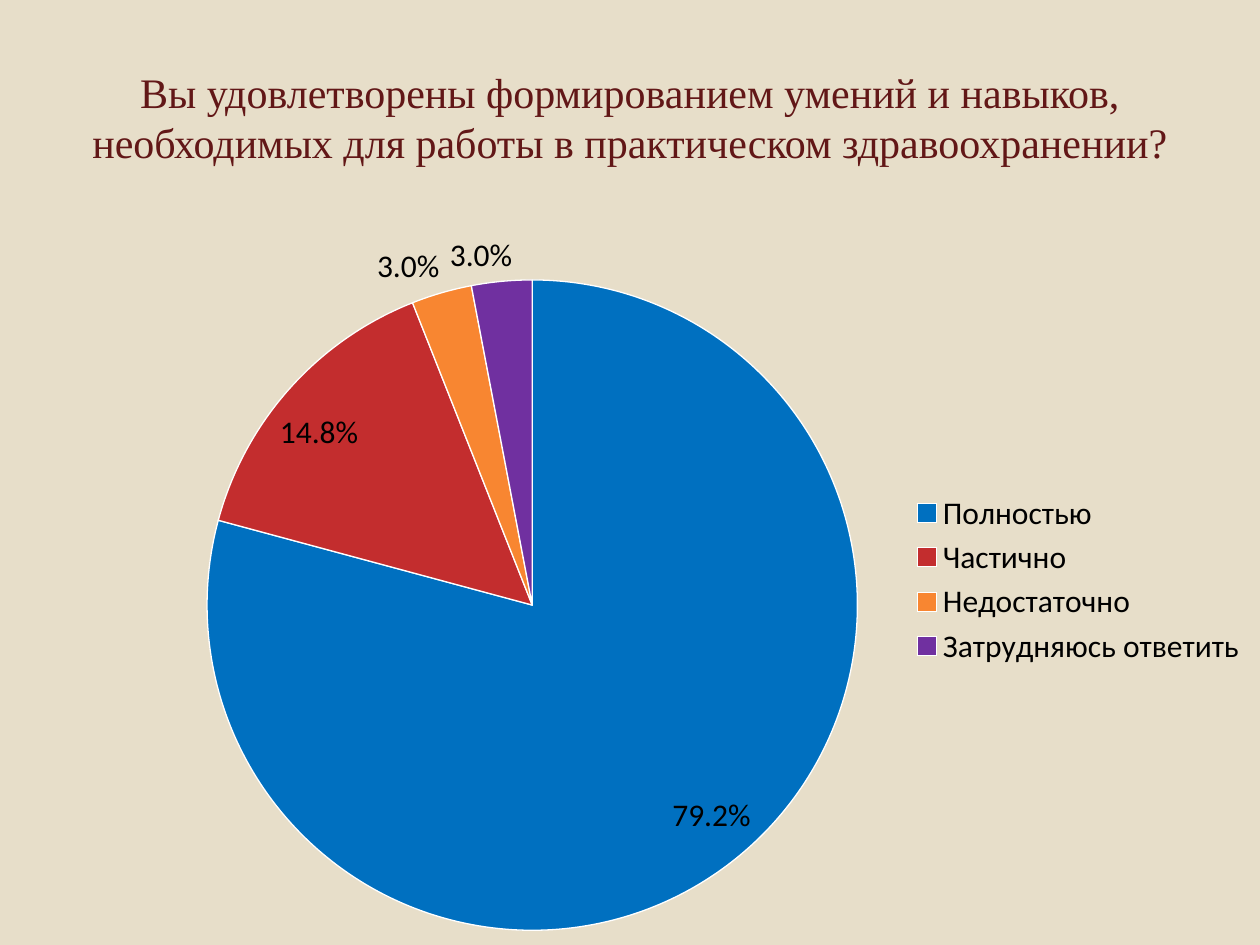
from dataclasses import dataclass

from lxml.etree import SubElement
from pptx import Presentation
from pptx.chart.data import CategoryChartData
from pptx.dml.color import RGBColor
from pptx.enum.chart import XL_CHART_TYPE, XL_LABEL_POSITION, XL_LEGEND_POSITION
from pptx.enum.text import MSO_ANCHOR, PP_ALIGN
from pptx.oxml.ns import qn
from pptx.util import Inches, Pt


@dataclass(frozen=True)
class Theme:
    background = RGBColor.from_string("E7DEC9")
    title = RGBColor.from_string("621717")
    text = RGBColor.from_string("000000")
    border = RGBColor.from_string("FFFFFF")
    title_font = "Times New Roman"
    chart_font = "Calibri"
    title_size = Pt(24)
    chart_size = Pt(18)


theme = Theme()
answers = [
    ("Полностью", 79.2, "0070C0"),
    ("Частично", 14.8, "C32D2E"),
    ("Недостаточно", 3, "F88631"),
    ("Затрудняюсь ответить", 3, "7030A0"),
]

presentation = Presentation()
presentation.slide_width = Inches(10)
presentation.slide_height = Inches(7.5)
slide = presentation.slides.add_slide(presentation.slide_layouts[5])
slide.background.fill.solid()
slide.background.fill.fore_color.rgb = theme.background

# Title
title = slide.shapes.title
title.left, title.top = Inches(0.5), Inches(0.3)
title.width, title.height = Inches(9), Inches(1.25)
title.text_frame.vertical_anchor = MSO_ANCHOR.MIDDLE
paragraph = title.text_frame.paragraphs[0]
paragraph.alignment = PP_ALIGN.CENTER
run = paragraph.add_run()
run.text = (
    "Вы удовлетворены формированием умений и навыков, "
    "необходимых для работы в практическом здравоохранении?"
)
run.font.name = theme.title_font
run.font.size = theme.title_size
run.font.color.rgb = theme.title

# Pie chart of the answers
chart_data = CategoryChartData()
chart_data.categories = [answer for answer, _, _ in answers]
chart_data.add_series("Series 1", [share for _, share, _ in answers])
chart = slide.shapes.add_chart(
    XL_CHART_TYPE.PIE, Inches(1.38), Inches(1.7), Inches(8.62), Inches(5.8), chart_data
).chart
chart.has_title = False
chart.font.name = theme.chart_font
chart.font.size = theme.chart_size
chart.font.color.rgb = theme.text
chart.has_legend = True
chart.legend.position = XL_LEGEND_POSITION.RIGHT
chart.legend.include_in_layout = False

plot = chart.plots[0]
plot.vary_by_categories = True
for index, (_, _, color) in enumerate(answers):
    slice_format = plot.series[0].points[index].format
    slice_format.fill.solid()
    slice_format.fill.fore_color.rgb = RGBColor.from_string(color)
    slice_format.line.color.rgb = theme.border
    slice_format.line.width = Pt(0.75)

plot.has_data_labels = True
labels = plot.data_labels
labels.show_percentage = True
labels.show_value = False
labels.number_format = "0.0%"
labels.number_format_is_linked = False
labels.position = XL_LABEL_POSITION.BEST_FIT

# Fixed pie area, as fractions of the chart
plot_area = chart.element.find(".//" + qn("c:plotArea"))
layout = plot_area.find(qn("c:layout"))
if layout is None:
    layout = SubElement(plot_area, qn("c:layout"))
    plot_area.insert(0, layout)
manual_layout = SubElement(layout, qn("c:manualLayout"))
for tag, value in [
    ("layoutTarget", "inner"), ("xMode", "edge"), ("yMode", "edge"),
    ("x", "0.03"), ("y", "0.09"), ("w", "0.6"), ("h", "0.89"),
]:
    SubElement(manual_layout, qn("c:" + tag)).set("val", value)

presentation.save("out.pptx")
